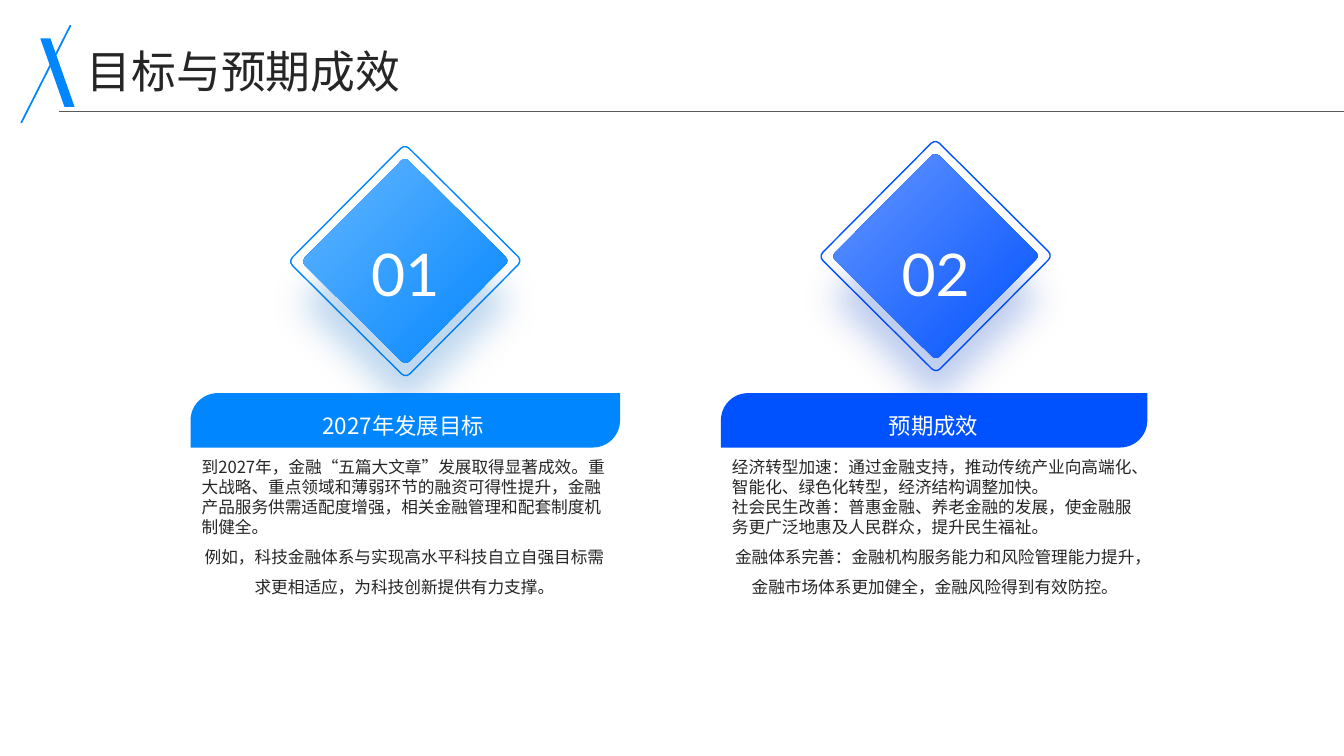
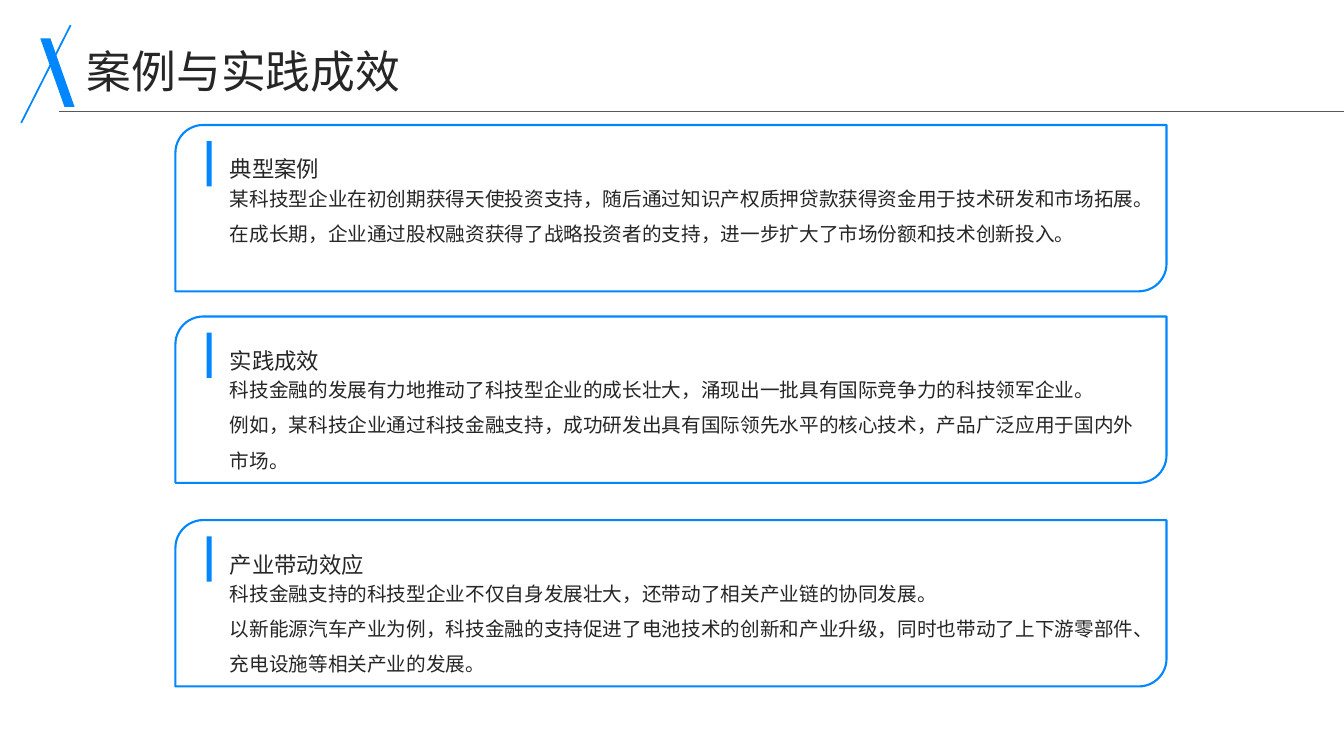
from lxml.etree import SubElement
from pptx import Presentation
from pptx.dml.color import RGBColor
from pptx.enum.shapes import MSO_CONNECTOR, MSO_SHAPE
from pptx.enum.text import MSO_ANCHOR, PP_ALIGN
from pptx.oxml.ns import qn
from pptx.util import Inches, Pt

SKY = RGBColor(0x00, 0x86, 0xFF)
SKY_LIGHT = RGBColor(0x66, 0xB6, 0xFF)
SKY_SHADOW = RGBColor(0x00, 0x64, 0xBF)
ROYAL = RGBColor(0x00, 0x51, 0xFF)
ROYAL_LIGHT = RGBColor(0x66, 0x97, 0xFF)
ROYAL_SHADOW = RGBColor(0x00, 0x3D, 0xBF)
INK = RGBColor(0x26, 0x26, 0x26)
RULE = RGBColor(0x59, 0x59, 0x59)
WHITE = RGBColor(0xFF, 0xFF, 0xFF)

CHINESE_FONT = "Noto Sans CJK SC"
NUMBER_FONT = "Lato"
PAGE_WIDTH, PAGE_HEIGHT = 13.33, 7.5

# Left edge, banner width, diamond top, (main, light, shadow), number, heading, paragraphs
GOALS = [
    (1.89, 4.26, 1.77, (SKY, SKY_LIGHT, SKY_SHADOW), "01", "2027年发展目标", [
        "到2027年，金融“五篇大文章”发展取得显著成效。重大战略、重点领域和薄弱环节的融资可得性提升，"
        "金融产品服务供需适配度增强，相关金融管理和配套制度机制健全。",
        "例如，科技金融体系与实现高水平科技自立自强目标需求更相适应，为科技创新提供有力支撑。",
    ]),
    (7.15, 4.23, 1.72, (ROYAL, ROYAL_LIGHT, ROYAL_SHADOW), "02", "预期成效", [
        "经济转型加速：通过金融支持，推动传统产业向高端化、智能化、绿色化转型，经济结构调整加快。",
        "社会民生改善：普惠金融、养老金融的发展，使金融服务更广泛地惠及人民群众，提升民生福祉。",
        "金融体系完善：金融机构服务能力和风险管理能力提升，金融市场体系更加健全，金融风险得到有效防控。",
    ]),
]

# Top edge, heading, paragraphs
CASES = [
    (1.24, "典型案例", [
        "某科技型企业在初创期获得天使投资支持，随后通过知识产权质押贷款获得资金用于技术研发和市场拓展。",
        "在成长期，企业通过股权融资获得了战略投资者的支持，进一步扩大了市场份额和技术创新投入。",
    ]),
    (3.14, "实践成效", [
        "科技金融的发展有力地推动了科技型企业的成长壮大，涌现出一批具有国际竞争力的科技领军企业。",
        "例如，某科技企业通过科技金融支持，成功研发出具有国际领先水平的核心技术，产品广泛应用于国内外市场。",
    ]),
    (5.16, "产业带动效应", [
        "科技金融支持的科技型企业不仅自身发展壮大，还带动了相关产业链的协同发展。",
        "以新能源汽车产业为例，科技金融的支持促进了电池技术的创新和产业升级，"
        "同时也带动了上下游零部件、充电设施等相关产业的发展。",
    ]),
]


def add_shape(page, kind, left, top, width, height, fill=None, line=None,
              line_width=1, adjustments=()):
    shape = page.shapes.add_shape(
        kind, Inches(left), Inches(top), Inches(width), Inches(height))
    shape.shadow.inherit = False
    for index, value in enumerate(adjustments):
        shape.adjustments[index] = value
    if fill is None:
        shape.fill.background()
    else:
        shape.fill.solid()
        shape.fill.fore_color.rgb = fill
    if line is None:
        shape.line.fill.background()
    else:
        shape.line.color.rgb = line
        shape.line.width = Pt(line_width)
    return shape


def add_line(page, start, end, color, width):
    line = page.shapes.add_connector(
        MSO_CONNECTOR.STRAIGHT, *(Inches(value) for value in (*start, *end)))
    line.line.color.rgb = color
    line.line.width = Pt(width)
    SubElement(line._element.spPr, qn("a:effectLst"))


def add_text(page, left, top, width, height, paragraphs, size, color=INK,
             font=CHINESE_FONT, anchor=MSO_ANCHOR.TOP, align=PP_ALIGN.LEFT, spacing=1.5):
    """Alignment and line spacing go to the last paragraph; earlier ones are plain."""
    box = page.shapes.add_textbox(
        Inches(left), Inches(top), Inches(width), Inches(height))
    frame = box.text_frame
    frame.word_wrap = True
    frame.vertical_anchor = anchor
    frame.margin_left = frame.margin_right = frame.margin_top = frame.margin_bottom = 0
    frame.text = "\n".join(paragraphs)
    for para in frame.paragraphs:
        para.font.size = Pt(size)
        para.font.name = font
        para.font.color.rgb = color
        SubElement(para._p.pPr.find(qn("a:defRPr")), qn("a:ea"), typeface=font)
    para.alignment = align
    para.line_spacing = spacing


def add_soft_shadow(shape, color):
    effects = shape._element.spPr.find(qn("a:effectLst"))
    shadow = SubElement(
        effects, qn("a:outerShdw"), blurRad=str(Pt(26)), dist=str(Pt(30)),
        dir="5400000", algn="t", rotWithShape="0")
    tone = SubElement(shadow, qn("a:srgbClr"), val=str(color))
    SubElement(tone, qn("a:alpha"), val="25000")


def add_header(page, title):
    add_text(page, 0.86, 0.44, 11.74, 0.47, [title], 32,
             anchor=MSO_ANCHOR.MIDDLE, spacing=1.1)
    slash = add_shape(page, MSO_SHAPE.PARALLELOGRAM, 0.4, 0.38, 0.34, 0.68,
                      fill=SKY, adjustments=[0.705])
    slash._element.spPr.xfrm.set("flipH", "1")
    add_line(page, (0.7, 0.25), (0.21, 1.22), SKY, 1.25)
    add_line(page, (0.59, 1.11), (PAGE_WIDTH, 1.11), RULE, 0.75)


def add_diamond(page, left, top, colors):
    main, light, shade = colors
    frame = add_shape(page, MSO_SHAPE.ROUNDED_RECTANGLE, left, top, 1.64, 1.64,
                      line=main, adjustments=[0.035])
    core = add_shape(page, MSO_SHAPE.ROUNDED_RECTANGLE, left + 0.09, top + 0.09,
                     1.46, 1.46, adjustments=[0.035])
    frame.rotation = core.rotation = 314.8
    core.fill.gradient()
    core.fill.gradient_angle = 90
    for stop, color in zip(core.fill.gradient_stops, (main, light)):
        stop.color.rgb = color
    add_soft_shadow(core, shade)


def add_goal(page, left, width, diamond_top, colors, number, heading, paragraphs):
    centered = {"anchor": MSO_ANCHOR.MIDDLE, "align": PP_ALIGN.CENTER, "color": WHITE}
    add_diamond(page, left + 1.31, diamond_top, colors)
    add_text(page, left + 1.62, 2.03, 1.02, 1.01, [number], 42,
             font=NUMBER_FONT, **centered)
    add_shape(page, MSO_SHAPE.ROUND_2_DIAG_RECTANGLE, left, 3.9, width, 0.54,
              fill=colors[0], adjustments=[0.5, 0])
    add_text(page, left + 0.11, 3.97, 4, 0.38, [heading], 16, **centered)
    add_text(page, left + 0.11, 4.53, 4.02, 1.77, paragraphs, 11.9,
             align=PP_ALIGN.CENTER)


def add_case(page, top, heading, paragraphs):
    left, text_left, text_width = 1.74, 2.28, 9.07
    add_shape(page, MSO_SHAPE.ROUND_2_DIAG_RECTANGLE, left, top, 9.83, 1.65,
              fill=WHITE, line=SKY, line_width=1.5)
    add_shape(page, MSO_SHAPE.RECTANGLE, left + 0.31, top + 0.16, 0.05, 0.45, fill=SKY)
    add_text(page, text_left, top + 0.16, text_width, 0.41, [heading], 16,
             anchor=MSO_ANCHOR.BOTTOM, spacing=1.3)
    add_text(page, text_left, top + 0.61, text_width, 0.9, paragraphs, 14)


def add_page(deck, title, add_region, regions):
    page = deck.slides.add_slide(deck.slide_layouts[6])
    for region in regions:
        add_region(page, *region)
    add_header(page, title)


def main():
    deck = Presentation()
    deck.slide_width = Inches(PAGE_WIDTH)
    deck.slide_height = Inches(PAGE_HEIGHT)
    add_page(deck, "目标与预期成效", add_goal, GOALS)
    add_page(deck, "案例与实践成效", add_case, CASES)
    deck.save("out.pptx")


if __name__ == "__main__":
    main()
